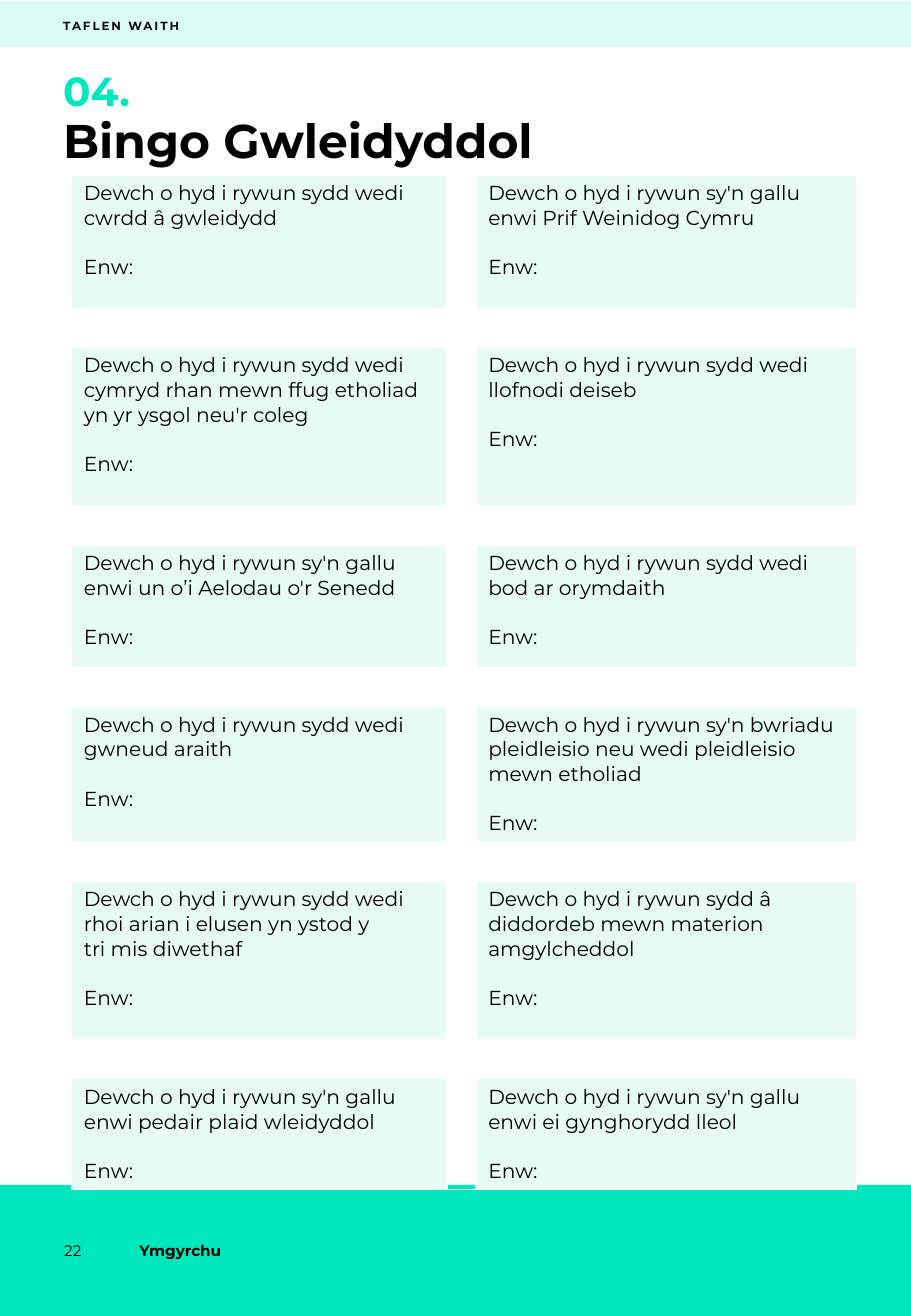
from dataclasses import dataclass

from lxml import etree
from pptx import Presentation
from pptx import util as u
from pptx.dml.color import RGBColor
from pptx.enum import shapes, text
from pptx.oxml.ns import qn


@dataclass(frozen=True)
class Theme:
    font: str = "Montserrat"
    mint: str = "00E7BD"
    card: str = "E7FAF4"
    white: str = "FFFFFF"
    black: str = "000000"
    label: str = "0D0D0D"
    title_size: int = 28
    number_size: int = 24
    prompt_size: int = 12
    footer_size: int = 9
    label_size: int = 7
    name_gap: float = 14.6


@dataclass(frozen=True)
class Box:
    left: float
    top: float
    width: float
    height: float

    def lengths(self) -> tuple:
        return tuple(map(u.Inches, (self.left, self.top, self.width, self.height)))


@dataclass(frozen=True)
class Label:
    words: str
    box: Box
    size: int
    color: str
    bold: bool = True
    anchor: text.MSO_ANCHOR = text.MSO_ANCHOR.TOP
    line_spacing: float = 1.0
    tracking: int = 0


@dataclass(frozen=True)
class BingoRow:
    height: float
    left: str
    right: str


THEME = Theme()
MIDDLE = text.MSO_ANCHOR.MIDDLE
COLUMN_WIDTHS = (3.09, 0.24, 3.13)
ROW_GAP = 0.32
TABLE_BOX = Box(0.59, 1.44, 6.46, 8.23)
FOOTER_BAND = Box(0, 9.76, 7.5, 1.08)
HEADER_BAND = Box(0, 0.01, 7.5, 0.38)

TITLE = Label("Bingo Gwleidyddol", Box(0.52, 0.97, 6.46, 0.88),
              THEME.title_size, THEME.black, line_spacing=0.9)
NUMBER = Label("04.", Box(0.52, 0.54, 6.46, 0.37), THEME.number_size, THEME.mint)
SECTION = Label("TAFLEN WAITH", Box(0.52, 0.07, 2.7, 0.28),
                THEME.label_size, THEME.label, anchor=MIDDLE, tracking=120)
FOOTERS = (
    Label("Ymgyrchu", Box(1.05, 9.76, 2.77, 1.08), THEME.footer_size, THEME.black,
          anchor=MIDDLE),
    Label("22", Box(0.43, 9.76, 0.62, 1.08), THEME.footer_size, THEME.black,
          bold=False, anchor=MIDDLE),
)
ROWS = (
    BingoRow(1.1, "Dewch o hyd i rywun sydd wedi cwrdd â gwleidydd",
             "Dewch o hyd i rywun sy'n gallu enwi Prif Weinidog Cymru"),
    BingoRow(1.31, "Dewch o hyd i rywun sydd wedi cymryd rhan mewn ffug etholiad "
             "yn yr ysgol neu'r coleg",
             "Dewch o hyd i rywun sydd wedi llofnodi deiseb"),
    BingoRow(1.01, "Dewch o hyd i rywun sy'n gallu enwi un o’i Aelodau o'r Senedd",
             "Dewch o hyd i rywun sydd wedi bod ar orymdaith"),
    BingoRow(1.1, "Dewch o hyd i rywun sydd wedi gwneud araith",
             "Dewch o hyd i rywun sy'n bwriadu pleidleisio neu wedi pleidleisio "
             "mewn etholiad"),
    BingoRow(1.31, "Dewch o hyd i rywun sydd wedi rhoi arian i elusen yn ystod y\n"
             "tri mis diwethaf",
             "Dewch o hyd i rywun sydd â diddordeb mewn materion amgylcheddol"),
    BingoRow(0.91, "Dewch o hyd i rywun sy'n gallu enwi pedair plaid wleidyddol",
             "Dewch o hyd i rywun sy'n gallu enwi ei gynghorydd lleol"),
)


def format_runs(paragraph, size: int, color: str, bold: bool = False) -> None:
    for run in paragraph.runs:
        run.font.name = THEME.font
        run.font.size = u.Pt(size)
        run.font.bold = bold
        run.font.color.rgb = RGBColor.from_string(color)


def write_label(shape, label: Label) -> None:
    frame = shape.text_frame
    frame.text = label.words
    frame.word_wrap = True
    frame.auto_size = text.MSO_AUTO_SIZE.NONE
    frame.vertical_anchor = label.anchor
    paragraph = frame.paragraphs[0]
    paragraph.alignment = text.PP_ALIGN.LEFT
    paragraph.line_spacing = label.line_spacing
    paragraph.space_before = u.Pt(0)
    format_runs(paragraph, label.size, label.color, label.bold)
    if label.tracking:
        paragraph.runs[0].font._element.set("spc", str(label.tracking))


def fill_placeholder(slide, placeholder, label: Label) -> None:
    """Place a placeholder in front, without bullet, indent or insets."""
    box = label.box.lengths()
    placeholder.left, placeholder.top, placeholder.width, placeholder.height = box
    write_label(placeholder, label)
    frame = placeholder.text_frame
    frame.margin_left = frame.margin_right = 0
    frame.margin_top = frame.margin_bottom = 0
    properties = frame.paragraphs[0]._p.get_or_add_pPr()
    properties.set("marL", "0")
    properties.set("indent", "0")
    etree.SubElement(properties, qn("a:buNone"))
    slide.shapes._spTree.append(placeholder._element)


def add_band(slide, box: Box, opacity: int = 100) -> None:
    band = slide.shapes.add_shape(shapes.MSO_SHAPE.RECTANGLE, *box.lengths())
    band.shadow.inherit = False
    band.line.fill.background()
    band.fill.solid()
    band.fill.fore_color.rgb = RGBColor.from_string(THEME.mint)
    if opacity < 100:
        color = band._element.spPr.find(".//" + qn("a:srgbClr"))
        etree.SubElement(color, qn("a:alpha"), val=str(opacity * 1000))


def add_borders(cell) -> None:
    properties = cell._tc.get_or_add_tcPr()
    for position, side in enumerate(("lnL", "lnR", "lnT", "lnB")):
        line = etree.Element(qn(f"a:{side}"), w=str(u.Pt(1)))
        fill = etree.SubElement(line, qn("a:solidFill"))
        etree.SubElement(fill, qn("a:srgbClr"), val=THEME.white)
        properties.insert(position, line)


def write_card(cell, prompt: str) -> None:
    cell.fill.solid()
    cell.fill.fore_color.rgb = RGBColor.from_string(THEME.card)
    cell.text_frame.text = f"{prompt}\nEnw:"
    paragraphs = cell.text_frame.paragraphs
    for paragraph in paragraphs:
        format_runs(paragraph, THEME.prompt_size, THEME.black)
    paragraphs[-1].space_before = u.Pt(THEME.name_gap)


def add_bingo_table(slide) -> None:
    row_count = 2 * len(ROWS) - 1
    table = slide.shapes.add_table(row_count, len(COLUMN_WIDTHS),
                                   *TABLE_BOX.lengths()).table
    table.first_row = table.horz_banding = False
    for column, width in zip(table.columns, COLUMN_WIDTHS):
        column.width = u.Inches(width)
    for row in table.rows:
        row.height = u.Inches(ROW_GAP)
    for cell in table.iter_cells():
        cell.margin_top = cell.margin_bottom = 0
        cell.fill.background()
        add_borders(cell)
    for index, bingo_row in enumerate(ROWS):
        table.rows[2 * index].height = u.Inches(bingo_row.height)
        for column, prompt in ((0, bingo_row.left), (2, bingo_row.right)):
            cell = table.cell(2 * index, column)
            cell.margin_top = cell.margin_bottom = u.Inches(0.05)
            write_card(cell, prompt)


def main() -> None:
    presentation = Presentation()
    presentation.slide_width = u.Inches(7.5)
    presentation.slide_height = u.Inches(10.84)
    slide = presentation.slides.add_slide(presentation.slide_layouts[3])
    title, number, section = list(slide.placeholders)
    add_band(slide, FOOTER_BAND)
    add_band(slide, HEADER_BAND, opacity=14)
    for footer in FOOTERS:
        write_label(slide.shapes.add_textbox(*footer.box.lengths()), footer)
    add_bingo_table(slide)
    for placeholder, label in ((title, TITLE), (number, NUMBER), (section, SECTION)):
        fill_placeholder(slide, placeholder, label)
    presentation.save("out.pptx")


if __name__ == "__main__":
    main()
